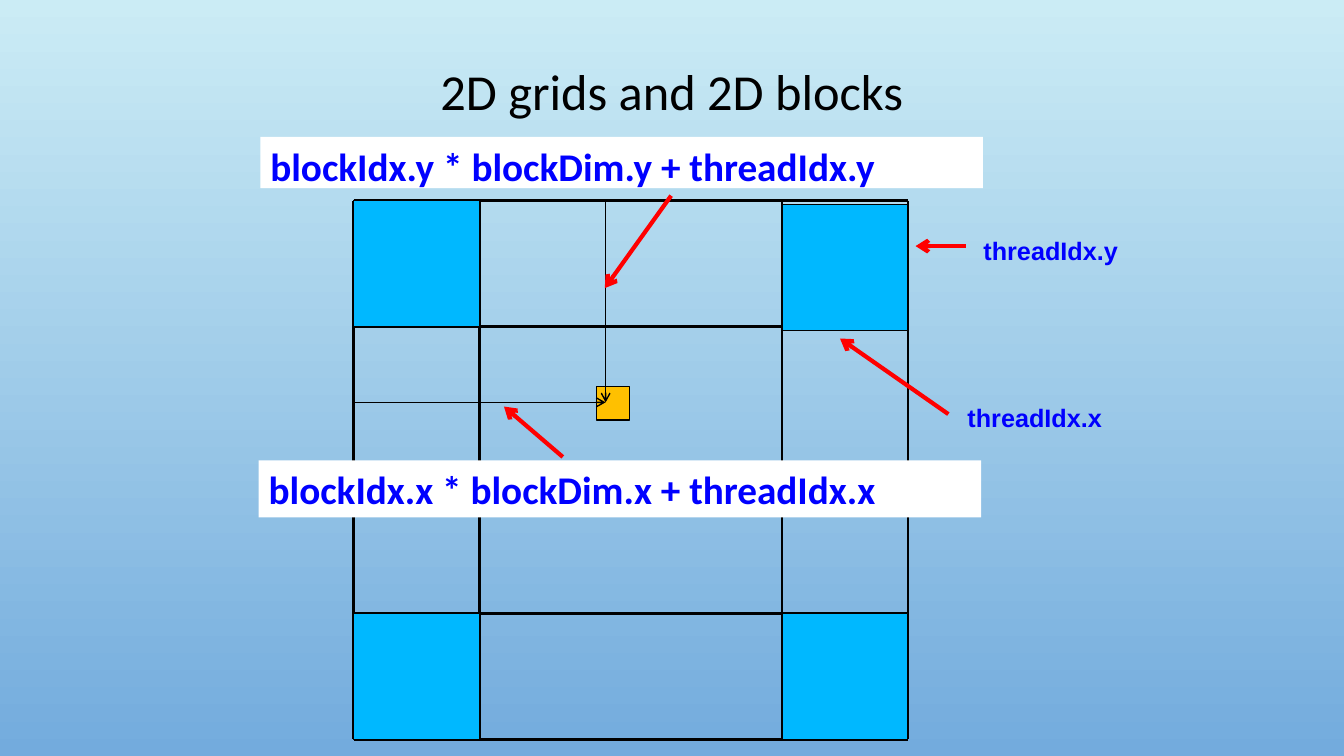
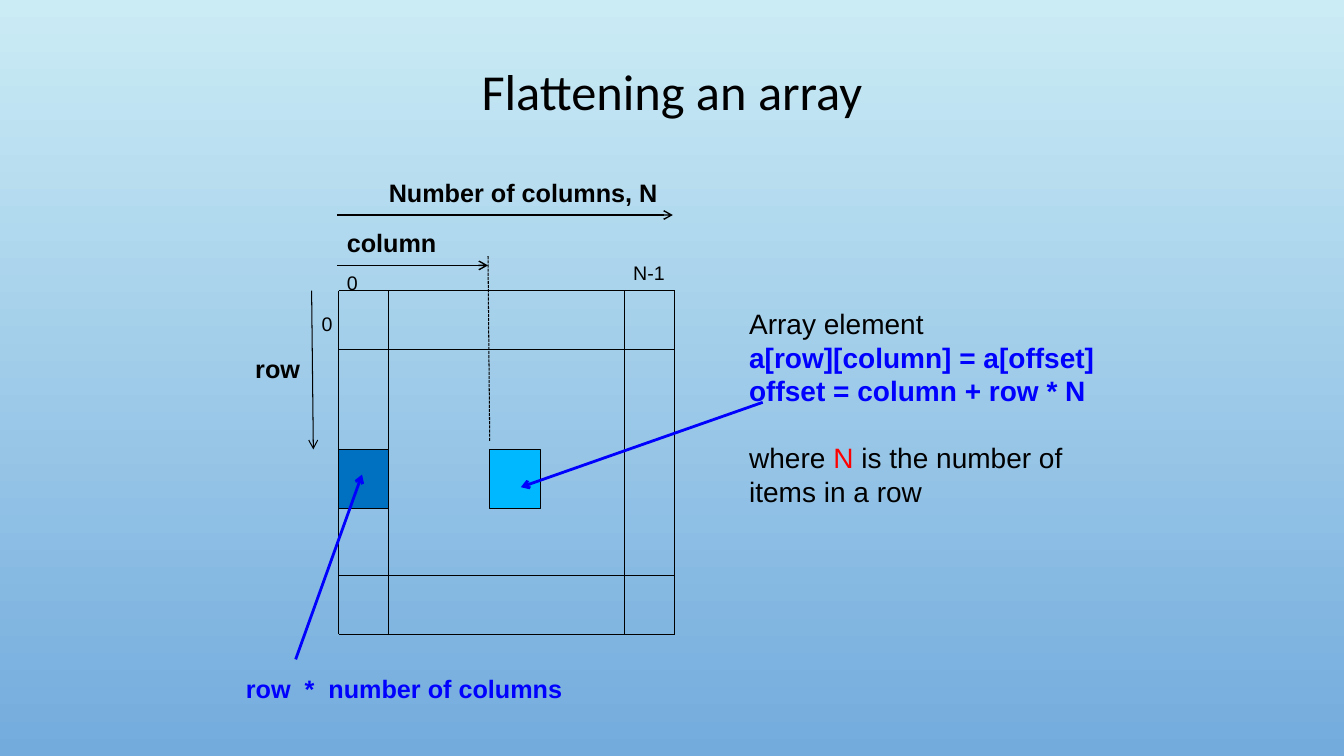
"""Build two slides on 2D thread indexing and array flattening."""
from itertools import product

from lxml.etree import SubElement
from pptx import Presentation
from pptx.dml.color import RGBColor
from pptx.enum.dml import MSO_LINE
from pptx.enum.shapes import MSO_CONNECTOR, MSO_SHAPE
from pptx.enum.text import MSO_ANCHOR, MSO_AUTO_SIZE, PP_ALIGN
from pptx.oxml.ns import qn
from pptx.util import Inches, Pt

COLUMNS, ROWS = 160, 90
SLIDE_WIDTH, SLIDE_HEIGHT = Inches(13.33), Inches(7.5)

COLORS = {
    "sky": "CBECF5",
    "dusk": "73ABDD",
    "ink": "000000",
    "paper": "FFFFFF",
    "code": "0000FF",
    "pointer": "FF0000",
    "block": "00B8FF",
    "thread": "FFC000",
    "row_start": "0070C0",
}

FONTS = {
    "title": {"name": "Calibri", "size": Pt(36), "color": "ink"},
    "formula": {"name": "Calibri", "size": Pt(28), "bold": True, "color": "code"},
    "code_label": {"name": "Arial", "size": Pt(18), "bold": True, "color": "code"},
    "label": {"name": "Arial", "size": Pt(18), "bold": True, "color": "ink"},
    "index": {"name": "Arial", "size": Pt(14), "color": "ink"},
    "body": {"name": "Arial", "size": Pt(20), "color": "ink"},
    "body_code": {"name": "Arial", "size": Pt(20), "bold": True, "color": "code"},
    "body_key": {"name": "Arial", "size": Pt(20), "color": "pointer"},
}

LABEL_FRAME = {"word_wrap": False, "auto_size": MSO_AUTO_SIZE.SHAPE_TO_FIT_TEXT}
BODY_FRAME = {"word_wrap": True, "auto_size": MSO_AUTO_SIZE.SHAPE_TO_FIT_TEXT}
TITLE_FRAME = {"word_wrap": True, "vertical_anchor": MSO_ANCHOR.MIDDLE}
FORMULA_FRAME = {"word_wrap": True, "vertical_anchor": MSO_ANCHOR.TOP}
TITLE_PARAGRAPH = {"alignment": PP_ALIGN.CENTER, "line_spacing": 0.9}
LEFT_PARAGRAPH = {"alignment": PP_ALIGN.LEFT}
GAP_PARAGRAPH = {"alignment": PP_ALIGN.LEFT, "space_before": Pt(24)}


def across(columns):
    """Turn grid columns into a horizontal length."""
    return round(SLIDE_WIDTH * columns / COLUMNS)


def down(rows):
    """Turn grid rows into a vertical length."""
    return round(SLIDE_HEIGHT * rows / ROWS)


def place(left, top, width, height):
    """Turn a box in columns and rows into slide lengths."""
    return across(left), down(top), across(width), down(height)


def color(key):
    """Look up a named colour."""
    return RGBColor.from_string(COLORS[key])


def apply(target, values):
    """Set every format value on the target."""
    for attribute, value in values.items():
        if attribute == "color":
            target.color.rgb = color(value)
        else:
            setattr(target, attribute, value)


def write(frame, paragraphs, frame_format):
    """Fill a text frame with (format, runs) paragraphs."""
    apply(frame, frame_format)
    for number, (paragraph_format, runs) in enumerate(paragraphs):
        paragraph = frame.add_paragraph() if number else frame.paragraphs[0]
        apply(paragraph, paragraph_format)
        for text, font in runs:
            run = paragraph.add_run()
            run.text = text
            apply(run.font, FONTS[font])


def add_text(slide, box, paragraphs, frame_format):
    """Add a text box on the grid."""
    frame = slide.shapes.add_textbox(*place(*box)).text_frame
    write(frame, paragraphs, frame_format)


def add_label(slide, box, text, font):
    """Add a one-line label."""
    add_text(slide, box, [(LEFT_PARAGRAPH, [(text, font)])], LABEL_FRAME)


def add_cell(slide, box, fill, outline="ink"):
    """Add a filled rectangle, outlined if a colour is given."""
    cell = slide.shapes.add_shape(MSO_SHAPE.RECTANGLE, *place(*box))
    cell.shadow.inherit = False
    cell.fill.solid()
    cell.fill.fore_color.rgb = color(fill)
    if outline:
        cell.line.color.rgb = color(outline)
        cell.line.width = Pt(0.75)
    else:
        cell.line.fill.background()
    return cell


def add_formula(slide, box, text):
    """Add a code formula on a white strip."""
    strip = add_cell(slide, box, "paper", None)
    write(strip.text_frame, [(LEFT_PARAGRAPH, [(text, "formula")])], FORMULA_FRAME)


def add_line(slide, start, end, weight, hue="ink", arrow=False, dash=None):
    """Add a straight line, with an open arrowhead on request."""
    line = slide.shapes.add_connector(
        MSO_CONNECTOR.STRAIGHT,
        across(start[0]), down(start[1]), across(end[0]), down(end[1]),
    )
    apply(line.line, {"color": hue, "width": Pt(weight), "dash_style": dash})
    if arrow:
        SubElement(line.line._get_or_add_ln(), qn("a:tailEnd"), type="arrow")
    SubElement(line._element.spPr, qn("a:effectLst"))


def add_lattice(slide, box, cell, weight):
    """Rule a frame with border cells and return its column and row edges."""
    left, top, width, height = box
    right, bottom = left + width, top + height
    column_edges = left, left + cell[0], right - cell[0], right
    row_edges = top, top + cell[1], bottom - cell[1], bottom
    for row in row_edges:
        add_line(slide, (left, row), (right, row), weight)
    for column in column_edges:
        add_line(slide, (column, top), (column, bottom), weight)
    return column_edges, row_edges


def add_titled_slide(deck, title):
    """Add a blank-layout slide with the shared title."""
    slide = deck.slides.add_slide(deck.slide_layouts[6])
    heading = [(TITLE_PARAGRAPH, [(title, "title")])]
    add_text(slide, (12, 3.8, 136, 14.8), heading, TITLE_FRAME)
    return slide


def paint_background(master):
    """Give the master a vertical gradient."""
    fill = master.background.fill
    fill.gradient()
    fill.gradient_angle = 270
    for stop, hue in zip(fill.gradient_stops, ("sky", "dusk")):
        stop.color.rgb = color(hue)


def build_blocks(deck):
    """Show how block and thread indices locate a thread."""
    slide = add_titled_slide(deck, "2D grids and 2D blocks")
    block = 15
    columns, rows = add_lattice(slide, (42.1, 23.9, 66, 64.1), (block, block), 2)
    left, top = columns[0], rows[0]
    for column, row in product((left, columns[2]), (top, rows[2])):
        nudge = 0.45 if column > left and row == top else 0
        add_cell(slide, (column, row + nudge, block, block), "block")
    add_label(slide, (114, 47.3, 18.6, 4.8), "threadIdx.x", "code_label")
    add_label(slide, (115.9, 27.4, 18.6, 4.8), "threadIdx.y", "code_label")

    add_cell(slide, (71, 46, 4, 4), "thread")
    thread = left + 2 * block, top + 24
    for start in ((left, thread[1]), (thread[0], top)):
        add_line(slide, start, thread, 1, arrow=True)
    add_formula(slide, (31, 16.3, 86, 6.1), "blockIdx.y * blockDim.y + threadIdx.y")
    add_formula(slide, (30.8, 54.8, 86, 6.8), "blockIdx.x * blockDim.x + threadIdx.x")
    pointers = (
        ((79.9, 23.3), (72, 34.3)),
        ((67, 54.4), (60, 48.4)),
        ((115, 29.3), (109, 29.3)),
        ((112.9, 49.3), (100, 40.3)),
    )
    for start, end in pointers:
        add_line(slide, start, end, 3, "pointer", arrow=True)


def build_flattening(deck):
    """Show how a row and column become one offset."""
    slide = add_titled_slide(deck, "Flattening an array")
    left, top = 40.3, 34.6
    item = 6, 7
    add_lattice(slide, (left, top, 40, 40.9), item, 0.75)
    element_column, element_row = left + 3 * item[0], 53.5
    add_cell(slide, (element_column, element_row, *item), "block")
    add_cell(slide, (left, element_row, *item), "row_start")

    measures = (
        ((40.1, 25.6), (80.1, 25.6), 1),
        ((40.1, 31.6), (58.1, 31.6), 1),
        ((37.1, top), (37.3, element_row), 0.75),
    )
    for start, end, weight in measures:
        add_line(slide, start, end, weight, arrow=True)
    add_line(slide, (58.1, 30.5), (element_column, 52.6), 0.75,
             dash=MSO_LINE.SQUARE_DOT)
    for start, end in (((90.8, 47.9), (62, 58)), ((35.2, 78.5), (43.1, 56.5))):
        add_line(slide, start, end, 2, "code", arrow=True)

    labels = (
        ((45.1, 20.5, 34.7, 4.3), "Number of columns, N", "label"),
        ((40.1, 26.5, 13.2, 4.3), "column", "label"),
        ((29.2, 41.5, 7.8, 4.3), "row", "label"),
        ((40.1, 31.6, 3.7, 3.7), "0", "index"),
        ((37.1, 36.5, 3.7, 3.7), "0", "index"),
        ((74.2, 30.5, 6.2, 3.7), "N-1", "index"),
    )
    for box, text, font in labels:
        add_label(slide, box, text, font)

    row_offset = [(LEFT_PARAGRAPH, [("row  *  number of columns", "code_label")])]
    add_text(slide, (28.1, 79.6, 58, 4.3), row_offset, BODY_FRAME)
    explanation = [
        (LEFT_PARAGRAPH, [("Array element", "body")]),
        (LEFT_PARAGRAPH, [("a[row][column] = a[offset]", "body_code")]),
        (LEFT_PARAGRAPH, [("offset = column + row * N", "body_code")]),
        (GAP_PARAGRAPH, [("where ", "body"), ("N ", "body_key"),
                         ("is the number of items in a row", "body")]),
    ]
    add_text(slide, (88, 35.9, 48, 29), explanation, BODY_FRAME)


def main():
    """Build and save the deck."""
    deck = Presentation()
    deck.slide_width, deck.slide_height = SLIDE_WIDTH, SLIDE_HEIGHT
    paint_background(deck.slide_master)
    build_blocks(deck)
    build_flattening(deck)
    deck.save("out.pptx")


if __name__ == "__main__":
    main()
